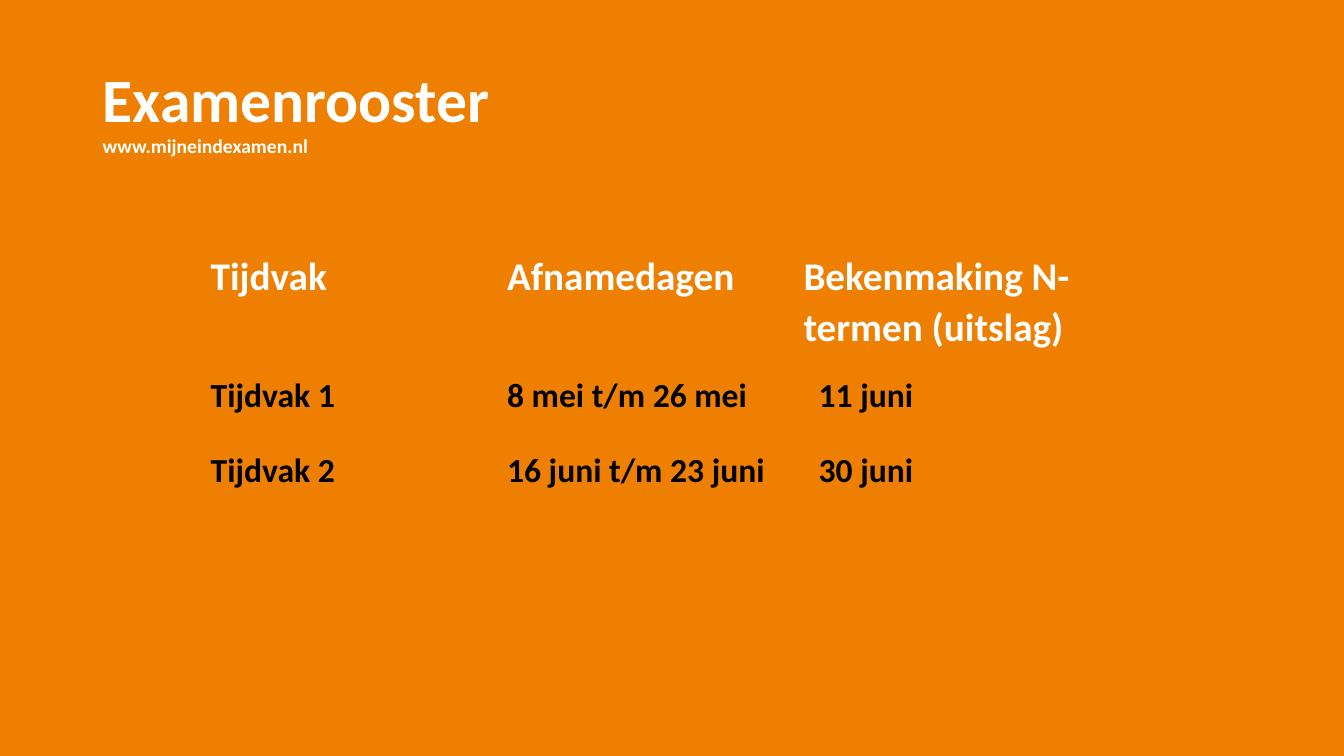
from lxml import etree
from pptx import Presentation
from pptx.dml.color import RGBColor
from pptx.enum import text
from pptx.oxml import ns
from pptx.util import Inches, Pt

COLORS = {"orange": "EE7F00", "white": "FFFFFF", "black": "000000"}
ROWS = [
    ["Tijdvak", "Afnamedagen", "Bekenmaking N-termen (uitslag)"],
    ["Tijdvak 1", "8 mei t/m 26 mei", "11 juni"],
    ["Tijdvak 2", "16 juni t/m 23 juni", "30 juni"],
    ["", "", ""],
]
ROW_HEIGHTS = [1.22, 0.74, 0.6, 0.6]
COLUMN_WIDTH = 2.94


def rgb(name):
    return RGBColor.from_string(COLORS[name])


def add_run(p, content, size=24, color="black", bold=True):
    r = p.add_run()
    r.text = content
    r.font.name = "Calibri"
    r.font.size = Pt(size)
    r.font.bold = bold
    r.font.color.rgb = rgb(color)


def add_title(s, title, address):
    tf = s.shapes.add_textbox(Inches(0.92), Inches(0.4), Inches(11.5), Inches(1.45)).text_frame
    tf.word_wrap = True
    tf.vertical_anchor = text.MSO_ANCHOR.MIDDLE
    p = tf.paragraphs[0]
    p.line_spacing = 0.9
    add_run(p, title, size=44, color="white")
    p.add_line_break()
    add_run(p, address, size=14, color="white")


def set_borders(cell, color, width=0.5):
    tc_pr = cell._tc.get_or_add_tcPr()
    for side in ("lnL", "lnR", "lnT", "lnB"):
        ln = etree.SubElement(tc_pr, ns.qn("a:" + side), w=str(Pt(width)))
        fill = etree.SubElement(ln, ns.qn("a:solidFill"))
        etree.SubElement(fill, ns.qn("a:srgbClr"), val=COLORS[color])


def fill_cell(cell, content, indent=0, **font):
    set_borders(cell, "orange")
    cell.fill.solid()
    cell.fill.fore_color.rgb = rgb("orange")
    cell.margin_left = Inches(0.07 + indent)
    cell.margin_right = Inches(0.07)
    cell.margin_top = cell.margin_bottom = 0
    if content:
        p = cell.text_frame.paragraphs[0]
        p.line_spacing = 1.07
        p.space_after = Pt(8)
        add_run(p, content, **font)


def add_schedule(s):
    n = len(ROWS[0])
    table = s.shapes.add_table(len(ROWS), n, Inches(2.02), Inches(2.48),
                               Inches(n * COLUMN_WIDTH), Inches(sum(ROW_HEIGHTS))).table
    table.first_row = table.horz_banding = False
    for column in table.columns:
        column.width = Inches(COLUMN_WIDTH)
    for i, (values, height) in enumerate(zip(ROWS, ROW_HEIGHTS)):
        table.rows[i].height = Inches(height)
        font = {"size": 24, "color": "black"} if i else {"size": 28, "color": "white"}
        for j, value in enumerate(values):
            indent = 0.15 if i and j == n - 1 else 0
            fill_cell(table.cell(i, j), value, indent=indent, **font)


def main():
    prs = Presentation()
    prs.slide_width, prs.slide_height = Inches(13.33), Inches(7.5)
    s = prs.slides.add_slide(prs.slide_layouts[6])
    s.background.fill.solid()
    s.background.fill.fore_color.rgb = rgb("orange")
    add_title(s, "Examenrooster", "www.mijneindexamen.nl")
    add_schedule(s)
    prs.save("out.pptx")


if __name__ == "__main__":
    main()
